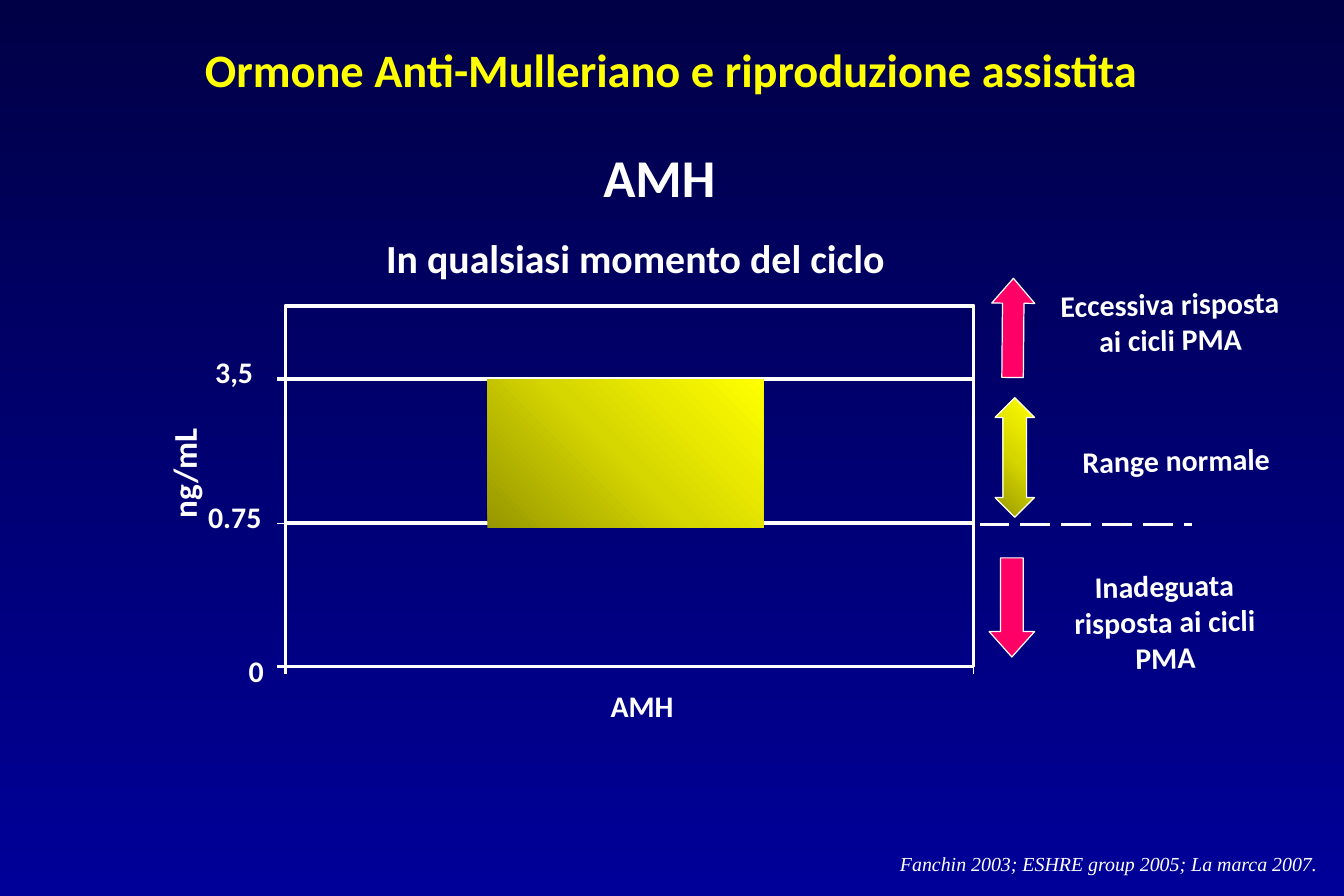
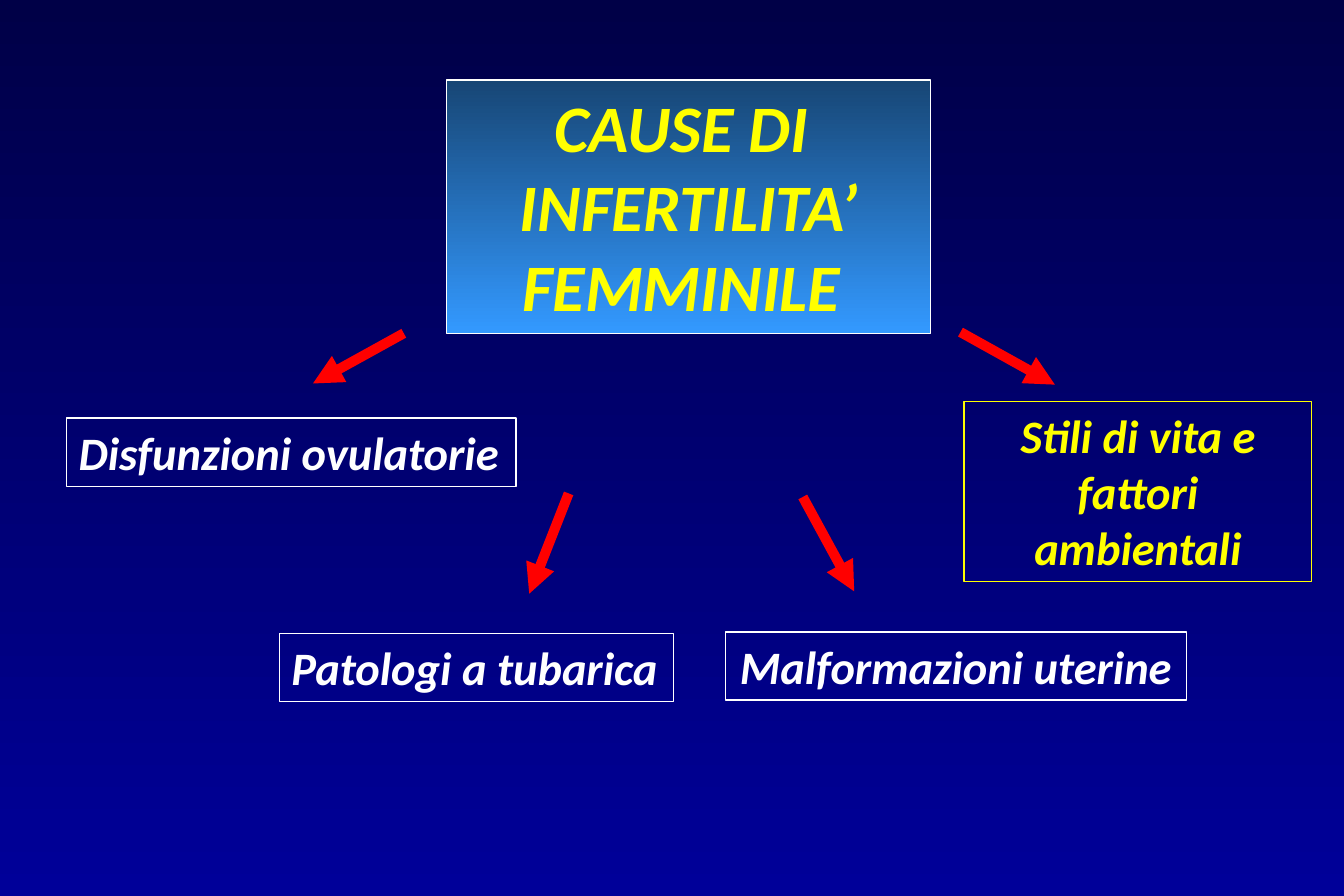
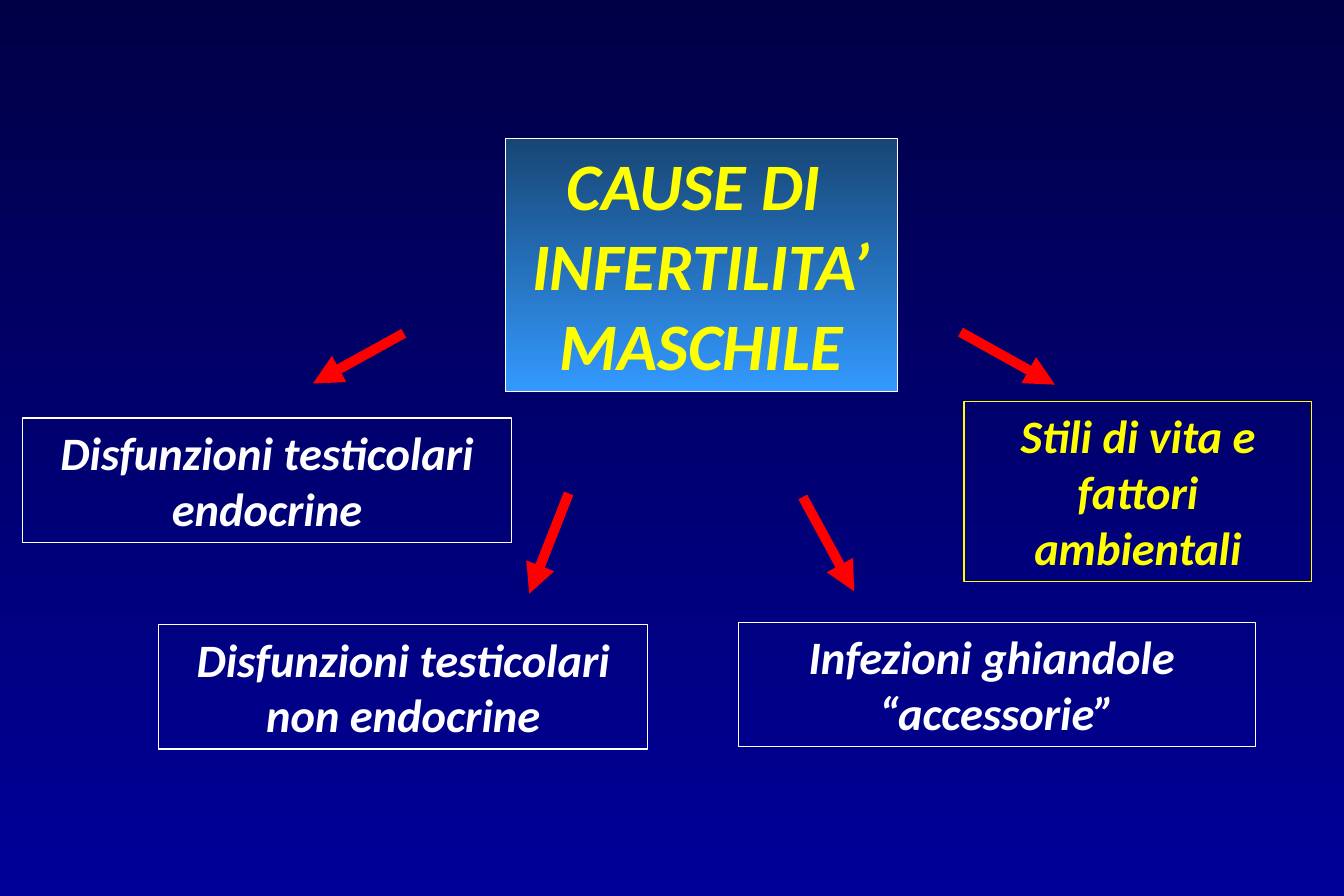
from copy import deepcopy

from pptx import Presentation
from pptx.dml.color import RGBColor
from pptx.enum.dml import MSO_LINE_DASH_STYLE as Dash
from pptx.enum.shapes import MSO_CONNECTOR as Connector, MSO_SHAPE as Shape
from pptx.enum.text import MSO_ANCHOR as Anchor, MSO_AUTO_SIZE as AutoSize, PP_ALIGN as Align
from pptx.oxml.ns import qn
from pptx.oxml.xmlchemy import OxmlElement
from pptx.util import Emu, Pt

PX = 9144  # 100 px to the inch
WIDTH, HEIGHT = 1125, 750

COLORS = {
    "night": "000047",
    "blue": "000099",
    "steel": "174675",
    "sky": "3399FF",
    "white": "FFFFFF",
    "yellow": "FFFF00",
    "gold": "D7D700",
    "olive": "979700",
    "pink": "FF0066",
    "red": "FF0000",
}
BACKGROUND = [(0, "night"), (1, "blue")]
HEADING = [(0, "steel"), (1, "sky")]
GLOW = [(0, "olive"), (0.5, "gold"), (1, "yellow")]
DOWNWARD, UP_RIGHT = 270, 45  # gradient directions, counter-clockwise


def color(name):
    return RGBColor.from_string(COLORS[name])


class Deck:
    """Holds the shared style and the current slide."""

    font = "Calibri"

    def __init__(self):
        self.deck = Presentation()
        self.deck.slide_width, self.deck.slide_height = Emu(WIDTH * PX), Emu(HEIGHT * PX)
        self.page = None

    def new_page(self):
        self.page = self.deck.slides.add_slide(self.deck.slide_layouts[6])
        self.gradient(self.page.background.fill, self.page.element, BACKGROUND, DOWNWARD)

    def gradient(self, fill, element, stops, angle):
        fill.gradient()
        fill.gradient_angle = angle
        stop_list = element.find(".//" + qn("a:gsLst"))
        while len(stop_list) < len(stops):
            stop_list.insert(1, deepcopy(stop_list[0]))
        for stop, (position, name) in zip(fill.gradient_stops, stops):
            stop.position = position
            stop.color.rgb = color(name)

    def set_text(self, box, words, size, ink="white", align=Align.CENTER, italic=False,
                 font=font, wrap=True, grow=True, anchor=Anchor.TOP, bold=True):
        frame = box.text_frame
        frame.text = words
        frame.word_wrap = wrap
        frame.vertical_anchor = anchor
        frame.auto_size = AutoSize.SHAPE_TO_FIT_TEXT if grow else AutoSize.NONE
        for para in frame.paragraphs:
            para.alignment = align
            para.font.name, para.font.size = font, Pt(size)
            para.font.bold, para.font.italic = bold, italic
            para.font.color.rgb = color(ink)

    def text(self, at, words, size, turn=0, inset=True, **style):
        box = self.page.shapes.add_textbox(*(Emu(n * PX) for n in at))
        box.rotation = turn
        if not inset:
            frame = box.text_frame
            frame.margin_left = frame.margin_right = frame.margin_top = frame.margin_bottom = 0
        self.set_text(box, words, size, **style)

    def shape(self, at, kind=Shape.RECTANGLE, fill=None, angle=UP_RIGHT, line="white",
              weight=0.75, adjust=(), turn=0):
        """Fill is a colour name, a list of gradient stops or None."""
        shape = self.page.shapes.add_shape(kind, *(Emu(n * PX) for n in at))
        shape.shadow.inherit = False
        shape.rotation = turn
        for index, value in enumerate(adjust):
            shape.adjustments[index] = value
        if fill is None:
            shape.fill.background()
        elif isinstance(fill, str):
            shape.fill.solid()
            shape.fill.fore_color.rgb = color(fill)
        else:
            self.gradient(shape.fill, shape.element, fill, angle)
        if line:
            shape.line.color.rgb = color(line)
            shape.line.width = Pt(weight)
        else:
            shape.line.fill.background()
        return shape

    def line(self, start, end, ink="white", weight=2.25, dash=None, arrow=False):
        line = self.page.shapes.add_connector(
            Connector.STRAIGHT, *(Emu(n * PX) for n in start + end))
        line.line.color.rgb = color(ink)
        line.line.width = Pt(weight)
        if dash:
            line.line.dash_style = dash
        properties = line.element.spPr
        if arrow:
            head = OxmlElement("a:tailEnd")
            head.set("type", "triangle")
            properties.find(qn("a:ln")).append(head)
        properties.append(OxmlElement("a:effectLst"))

    def cause(self, at, words, ink="white", **style):
        box = self.shape(at, line=ink)
        self.set_text(box, words, 28, ink=ink, italic=True, **style)

    def cause_page(self, heading_at, heading):
        """The parts that both pages of causes share."""
        self.new_page()
        box = self.shape(heading_at, fill=HEADING, angle=DOWNWARD)
        self.set_text(box, heading, 40, ink="yellow", italic=True)
        for start, end in (((338, 279), (262, 321)), ((476, 413), (443, 497)),
                           ((672, 416), (715, 495)), ((804, 278), (883, 322))):
            self.line(start, end, ink="red", weight=6, arrow=True)
        self.cause((807, 336, 291, 151), "Stili di vita e fattori ambientali", ink="yellow")


def hormone_page(deck):
    deck.new_page()
    # Titles and source
    deck.text((-31, 29, 1185, 58), "Ormone Anti-Mulleriano e riproduzione assistita", 28,
              ink="yellow", anchor=Anchor.MIDDLE, grow=False)
    deck.text((421, 116, 262, 64), "AMH", 32)
    deck.text((217, 191, 630, 50), "In qualsiasi momento del ciclo", 24)
    deck.text((686, 708, 431, 30), "Fanchin 2003; ESHRE group 2005; La marca 2007. ", 12,
              font="Times New Roman", align=Align.RIGHT, bold=False, italic=True)

    # Level diagram: grid, frame, normal band and ticks
    left, right, top, bottom = 239, 815, 256, 558
    levels = ((317, 2.25), (438, 0.75), (bottom, 2.25))
    for y, _ in levels:
        deck.line((left, y), (right, y))
    deck.shape((left, top, right - left, bottom - top), weight=2.25)
    deck.shape((408, 318, 231, 124), fill=GLOW, line=None)
    for y, weight in levels:
        deck.line((left - 7, y), (left, y), weight=weight)
    for x, weight in ((left, 2.25), (right, 0.75)):
        deck.line((x, bottom), (x, bottom + 6), weight=weight)

    # Axis labels
    for at, label in (((180, 296, 32, 30), "3,5"), ((174, 417, 45, 30), "0.75"),
                      ((208, 546, 13, 30), "0"), ((511, 576, 53, 30), "AMH")):
        deck.text(at, label, 18, inset=False, wrap=False)
    deck.text((75, 374, 158, 44), "ng/mL", 20, turn=270)

    # Response ranges
    deck.line((820, 439), (998, 439), dash=Dash.LONG_DASH)
    deck.shape((830, 233, 36, 83), Shape.UP_ARROW, "pink", adjust=(0.5, 0.58), turn=0.5)
    deck.shape((833, 333, 33, 100), Shape.UP_DOWN_ARROW, GLOW, adjust=(0.5, 0.6))
    deck.shape((828, 467, 38, 83), Shape.DOWN_ARROW, "pink", adjust=(0.5, 0.56))
    for at, label in (((878, 234, 203, 71), "Eccessiva risposta ai cicli PMA"),
                      ((844, 365, 281, 40), "Range normale"),
                      ((886, 470, 178, 101), "Inadeguata risposta ai cicli PMA")):
        deck.text(at, label, 18, turn=359)


def female_page(deck):
    deck.cause_page((374, 67, 405, 212), "CAUSE DI \nINFERTILITA’ FEMMINILE ")
    deck.cause((56, 350, 376, 57), "Disfunzioni ovulatorie", align=Align.LEFT, wrap=False)
    deck.cause((234, 530, 330, 57), "Patologi a tubarica", align=Align.LEFT, wrap=False)
    deck.cause((607, 529, 386, 57), "Malformazioni uterine", wrap=False)


def male_page(deck):
    deck.cause_page((423, 116, 328, 212), "CAUSE DI \nINFERTILITA’ MASCHILE")
    deck.cause((19, 350, 409, 104), "Disfunzioni testicolari\nendocrine")
    deck.cause((133, 523, 409, 104), "Disfunzioni testicolari non endocrine")
    deck.cause((618, 521, 433, 104), "Infezioni ghiandole \n“accessorie”")


def main():
    deck = Deck()
    for build in (hormone_page, female_page, male_page):
        build(deck)
    deck.deck.save("out.pptx")


if __name__ == "__main__":
    main()
